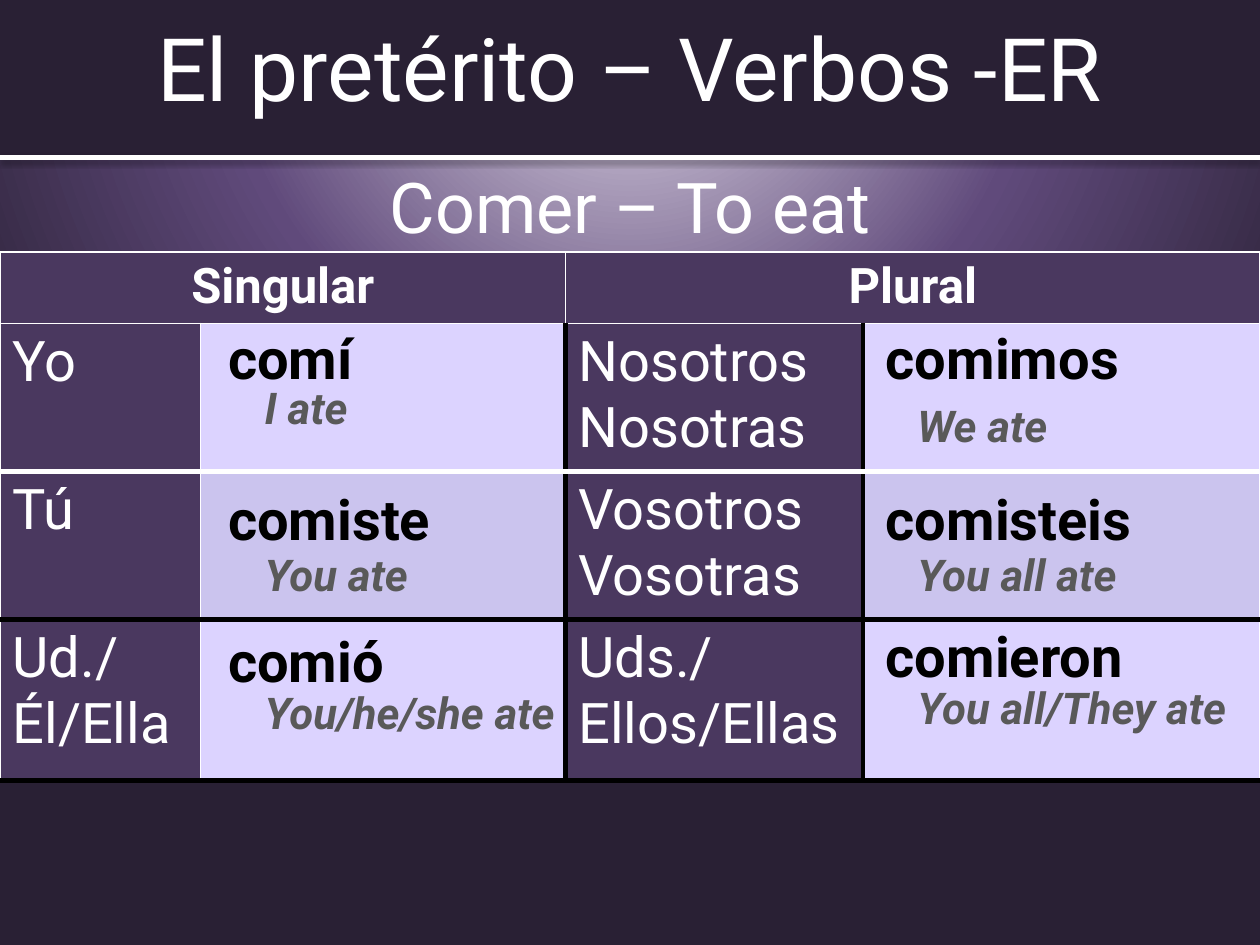
from pptx import Presentation
from pptx.dml.color import RGBColor as RGB
from pptx.enum.shapes import MSO_CONNECTOR as Link, MSO_SHAPE as Shape
from pptx.enum.text import MSO_ANCHOR as Anchor, PP_ALIGN as Align
from pptx.oxml import parse_xml
from pptx.oxml.ns import nsdecls
from pptx.util import Inches, Pt

WIDE, HIGH = Inches(10), Inches(7.5)
UNIT = WIDE // 100
FONT = "Roboto"
PLAIN = "{2D5ABB26-0587-4C30-8999-92F81FD0307C}"
WHITE = RGB(0xFF, 0xFF, 0xFF)
BLACK = RGB(0x00, 0x00, 0x00)
GRAY = RGB(0x59, 0x59, 0x59)
DARK = RGB(0x29, 0x20, 0x34)
PLUM = RGB(0x4A, 0x38, 0x5F)
LILAC = RGB(0xDC, 0xD3, 0xFF)
MAUVE = RGB(0xCB, 0xC4, 0xEE)
VIOLET = RGB(0x60, 0x4A, 0x7B)
PALE = RGB(0xE6, 0xE0, 0xEC)

COLS = [15.9, 29, 23.6, 31.5]
ROWS = [5.55, 11.75, 11.75, 12.8]
HEADS = ["Singular", "Plural"]
NOUNS = [
    ("Yo", "Nosotros\nNosotras"),
    ("Tú", "Vosotros\nVosotras"),
    ("Ud./Él/Ella", "Uds./Ellos/Ellas"),
]
FORMS = [
    (17.1, 20, [
        ("comí", 25.5, "I ate", 30),
        ("comiste", 38.3, "You ate", 43.2),
        ("comió", 49.5, "You/he/she ate", 54.2),
    ]),
    (69.3, 71.8, [
        ("comimos", 25.5, "We ate", 31.4),
        ("comisteis", 38.3, "You all ate", 43.2),
        ("comieron", 49.1, "You all/They ate", 53.8),
    ]),
]


def grid(*nums):
    return [round(num * UNIT) for num in nums]


def write(frame, text, size, color, align=Align.LEFT, bold=False, slant=False):
    frame.text = text
    for par in frame.paragraphs:
        par.alignment = align
        font = par.font
        font.name, font.size = FONT, Pt(size)
        font.bold, font.italic = bold, slant
        font.color.rgb = color


def backdrop(slide):
    stops = "".join(
        f'<a:gs pos="{pos}000"><a:srgbClr val="{color}"/></a:gs>'
        for pos, color in [(0, PALE), (52, VIOLET), (100, DARK)])
    slide.element.cSld.insert(0, parse_xml(
        f'<p:bg {nsdecls("p", "a")}><p:bgPr><a:gradFill rotWithShape="1">'
        f'<a:gsLst>{stops}</a:gsLst><a:path path="circle">'
        '<a:fillToRect l="50000" t="-80000" r="50000" b="180000"/>'
        '</a:path></a:gradFill><a:effectLst/></p:bgPr></p:bg>'))


def banner(slide, height):
    box = slide.shapes.add_shape(Shape.RECTANGLE, *grid(0, 0, 100, height))
    box.shadow.inherit = False
    box.fill.solid()
    box.fill.fore_color.rgb = DARK
    box.line.fill.background()


def rule(slide, top):
    line = slide.shapes.add_connector(Link.STRAIGHT, *grid(0, top, 100, top))
    line.line.color.rgb = WHITE
    line.line.width = Pt(3)
    line.element.spPr.append(parse_xml(
        f'<a:effectLst {nsdecls("a")}><a:outerShdw blurRad="{Pt(3.1)}" '
        f'dist="{Pt(1.6)}" dir="5400000" rotWithShape="0">'
        '<a:srgbClr val="000000"><a:alpha val="38000"/></a:srgbClr>'
        '</a:outerShdw></a:effectLst>'))


def label(slide, text, size, top, height, anchor):
    frame = slide.shapes.add_textbox(*grid(0, top, 100, height)).text_frame
    frame.word_wrap = True
    frame.vertical_anchor = anchor
    write(frame, text, size, WHITE, Align.CENTER)


def table(slide, left, top, cols, rows):
    place = grid(left, top, sum(cols), sum(rows))
    tab = slide.shapes.add_table(len(rows), len(cols), *place).table
    tab.first_row = tab.horz_banding = False
    tab._tbl.tblPr[0].text = PLAIN
    for col, size in zip(tab.columns, grid(*cols)):
        col.width = size
    for row, size in zip(tab.rows, grid(*rows)):
        row.height = size
    return tab


def paint(cell, color):
    cell.fill.solid()
    cell.fill.fore_color.rgb = color


def edge(cell, sides):
    props = cell._tc.get_or_add_tcPr()
    for spot, (side, (color, size)) in enumerate(sides.items()):
        props.insert(spot, parse_xml(
            f'<a:ln{side} {nsdecls("a")} w="{Pt(size)}"><a:solidFill>'
            f'<a:srgbClr val="{color}"/></a:solidFill></a:ln{side}>'))


def chart(slide):
    tab = table(slide, 0, 20, COLS, ROWS)
    thin, thick, bar = (WHITE, 1), (WHITE, 3), (BLACK, 3)
    flat = [thin, thick, bar, bar, thin]
    posts = [thin, thin, bar, bar, thin]
    for r in range(len(ROWS)):
        for c in range(len(COLS)):
            cell = tab.cell(r, c)
            shade = MAUVE if r == 2 else LILAC
            paint(cell, PLUM if r == 0 or c % 2 == 0 else shade)
            left, right = (posts[c], posts[c + 1]) if r else (thin, thin)
            edge(cell, {"L": left, "R": right,
                        "T": flat[r - 1] if r else thin, "B": flat[r]})
    for k, head in enumerate(HEADS):
        cell = tab.cell(0, 2 * k)
        cell.merge(tab.cell(0, 2 * k + 1))
        write(cell.text_frame, head, 28, WHITE, Align.CENTER, True)
    for r, pair in enumerate(NOUNS, 1):
        for k, noun in enumerate(pair):
            write(tab.cell(r, 2 * k).text_frame, noun, 32, WHITE)


def note(slide, text, left, top, wide, high, size, color, slant):
    cell = table(slide, left, top, [wide], [high]).cell(0, 0)
    cell.fill.background()
    write(cell.text_frame, text, size, color, bold=True, slant=slant)


def main():
    deck = Presentation()
    deck.slide_width, deck.slide_height = WIDE, HIGH
    slide = deck.slides.add_slide(deck.slide_layouts[6])
    backdrop(slide)
    banner(slide, 12.5)
    label(slide, "Comer – To eat", 40, 12.5, 52, Anchor.TOP)
    rule(slide, 12.5)
    label(slide, "El pretérito – Verbos -ER", 50, 0, 10.6, Anchor.MIDDLE)
    chart(slide)
    for left, inset, forms in FORMS:
        for verb, top, sense, low in forms:
            note(slide, verb, left, top, 25, 6.3, 32, BLACK, False)
            note(slide, sense, inset, low, 28.2, 5.2, 25, GRAY, True)
    deck.save("out.pptx")


if __name__ == "__main__":
    main()
